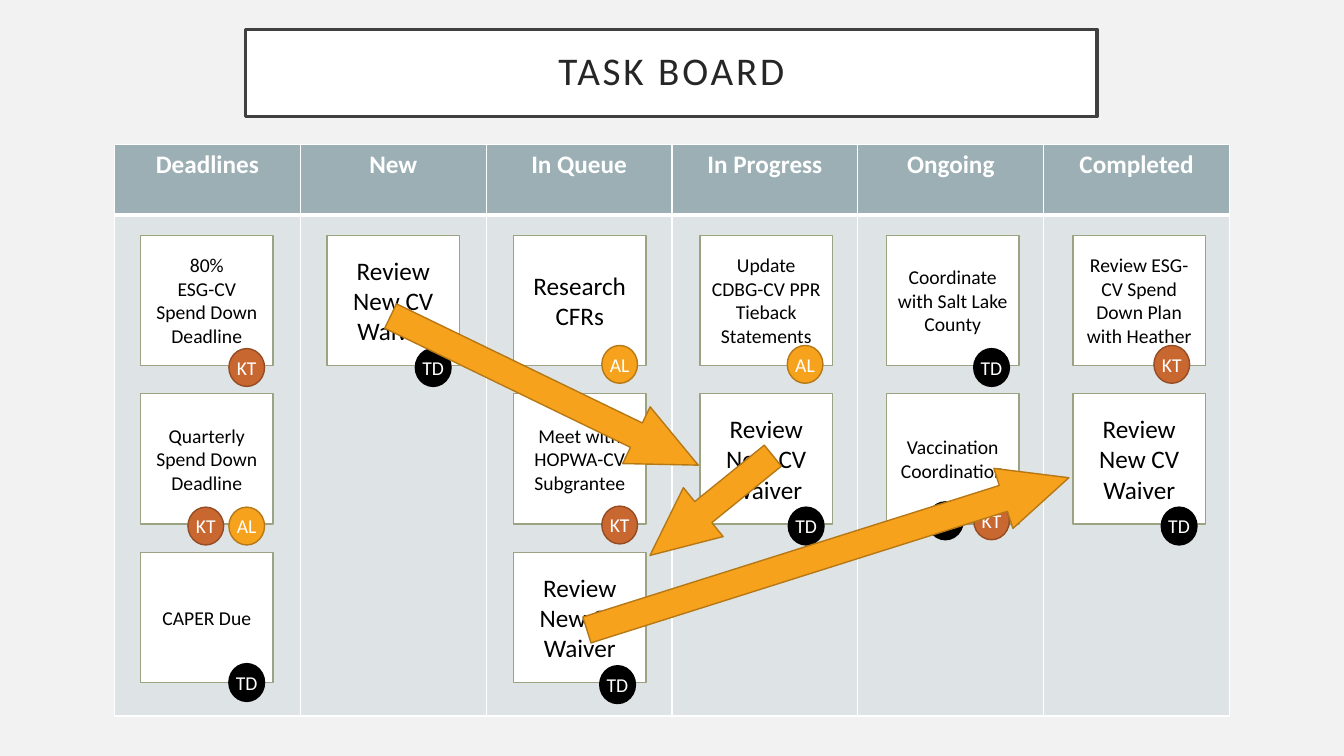
import math
from lxml import etree
from pptx import Presentation
from pptx.dml.color import RGBColor
from pptx.enum.shapes import MSO_SHAPE
from pptx.enum.text import MSO_ANCHOR, PP_ALIGN
from pptx.oxml.ns import qn
from pptx.util import Emu, Pt

RECT, OVAL, ARROW = MSO_SHAPE.RECTANGLE, MSO_SHAPE.OVAL, MSO_SHAPE.RIGHT_ARROW
MIDDLE, CENTER = MSO_ANCHOR.MIDDLE, PP_ALIGN.CENTER
FONT = "Calibri"
HEADS = ["Deadlines", "New", "In Queue", "In Progress", "Ongoing", "Completed"]
STAFF = {"KT": ("C96731", "954C24"), "AL": ("F6A21D", "B67815"), "TD": ("000000", "000000")}
REVIEW = "Review New CV Waiver"
CARDS = [
    (0, 0, "80%\nESG-CV Spend Down Deadline", 14, [("KT", 84, 108)]),
    (0, 1, "Quarterly Spend Down Deadline", 14, [("KT", 45, 108), ("AL", 84, 108)]),
    (0, 2, "CAPER Due", 14, [("TD", 84, 106)]),
    (1, 0, REVIEW, 18, [("TD", 84, 108)]),
    (2, 0, "Research CFRs", 18, [("AL", 84, 105)]),
    (2, 1, "Meet with HOPWA-CV Subgrantee", 14, [("KT", 84, 107)]),
    (2, 2, REVIEW, 18, [("TD", 82, 108)]),
    (3, 0, "Update CDBG-CV PPR Tieback Statements", 14, [("AL", 83, 105)]),
    (3, 1, REVIEW, 18, [("TD", 84, 108)]),
    (4, 0, "Coordinate with Salt Lake County", 14, [("TD", 83, 108)]),
    (4, 1, "Vaccination Coordination", 14, [("KT", 83, 103), ("TD", 39, 103)]),
    (5, 0, "Review ESG-CV Spend Down Plan with Heather", 14, [("KT", 77, 105)]),
    (5, 1, REVIEW, 18, [("TD", 84, 108)]),
]
MOVES = [((559, 600), (1018, 455)), ((736, 434), (619, 529)), ((372, 301), (665, 443))]


def px(n):
    return Emu(round(n * 9525))


def color(code):
    return RGBColor.from_string(code)


def style(para, size, code, bold=False):
    para.alignment = CENTER
    para.font.name = FONT
    para.font.size = Pt(size)
    para.font.bold = bold
    para.font.color.rgb = color(code)


def draw(shapes, kind, box, fill, line, width=1):
    shape = shapes.add_shape(kind, *map(px, box))
    shape.shadow.inherit = False
    shape.fill.solid()
    shape.fill.fore_color.rgb = color(fill)
    shape.line.color.rgb = color(line)
    shape.line.width = Pt(width)
    return shape


def write(shape, text, size, code, wrap=True):
    frame = shape.text_frame
    frame.text = text
    frame.word_wrap = wrap
    frame.vertical_anchor = MIDDLE
    for para in frame.paragraphs:
        style(para, size, code)
    return frame


def add_title(slide, box):
    shape = draw(slide.shapes, RECT, box, "FFFFFF", "404040", 2.5)
    frame = write(shape, "TASK BOARD", 28, "262626")
    para = frame.paragraphs[0]
    para.line_spacing = 0.9
    para.runs[0]._r.get_or_add_rPr().set("spc", "200")


def add_edge(cell, side, width):
    edge = etree.SubElement(cell._tc.get_or_add_tcPr(), qn("a:ln" + side), w=str(Pt(width)))
    fill = etree.SubElement(edge, qn("a:solidFill"))
    etree.SubElement(fill, qn("a:srgbClr"), val="FFFFFF")


def add_board(slide, box):
    table = slide.shapes.add_table(2, len(HEADS), *map(px, box)).table
    table.horz_banding = False
    head, width, high = 67, box[2] / len(HEADS), box[3]
    table.rows[0].height = px(head)
    table.rows[1].height = px(high - head)
    for c, name in enumerate(HEADS):
        table.columns[c].width = px(width)
        for r, (fill, top, base) in enumerate([("9BAFB5", 1, 3), ("DEE3E5", 3, 1)]):
            cell = table.cell(r, c)
            for side, line in zip("LRTB", (1, 1, top, base)):
                add_edge(cell, side, line)
            cell.fill.solid()
            cell.fill.fore_color.rgb = color(fill)
        cell = table.cell(0, c)
        cell.text = name
        style(cell.text_frame.paragraphs[0], 18, "FFFFFF", True)


def add_card(slide, box, text, size, badges):
    group = slide.shapes.add_group_shape().shapes
    card = draw(group, RECT, box, "FFFFFF", "9CA383")
    write(card, text, size, "000000")
    for name, dx, dy in badges:
        badge = draw(group, OVAL, (box[0] + dx, box[1] + dy, 34, 36), *STAFF[name])
        write(badge, name, 14, "FFFFFF", False)


def add_cards(slide, box):
    left, top, width, high = box
    for col, row, text, size, badges in CARDS:
        spot = (left + col * width / 5, top + row * high / 2, 126, 124)
        add_card(slide, spot, text, size, badges)


def add_move(slide, tail, tip):
    dx, dy = tip[0] - tail[0], tip[1] - tail[1]
    span, high = math.hypot(dx, dy), 60
    box = (tail[0] + (dx - span) / 2, tail[1] + (dy - high) / 2, span, high)
    arrow = draw(slide.shapes, ARROW, box, "F6A21D", "B67815")
    arrow.adjustments[0] = 0.43
    arrow.adjustments[1] = 1.09
    arrow.rotation = math.degrees(math.atan2(dy, dx))


def main():
    deck = Presentation()
    deck.slide_width, deck.slide_height = px(1280), px(720)
    slide = deck.slides.add_slide(deck.slide_layouts[6])
    slide.background.fill.solid()
    slide.background.fill.fore_color.rgb = color("F2F2F2")
    add_title(slide, (234, 28, 811, 83))
    add_board(slide, (109, 138, 1062, 544))
    add_cards(slide, (134, 224, 888, 302))
    for tail, tip in MOVES:
        add_move(slide, tail, tip)
    deck.save("out.pptx")


if __name__ == "__main__":
    main()
